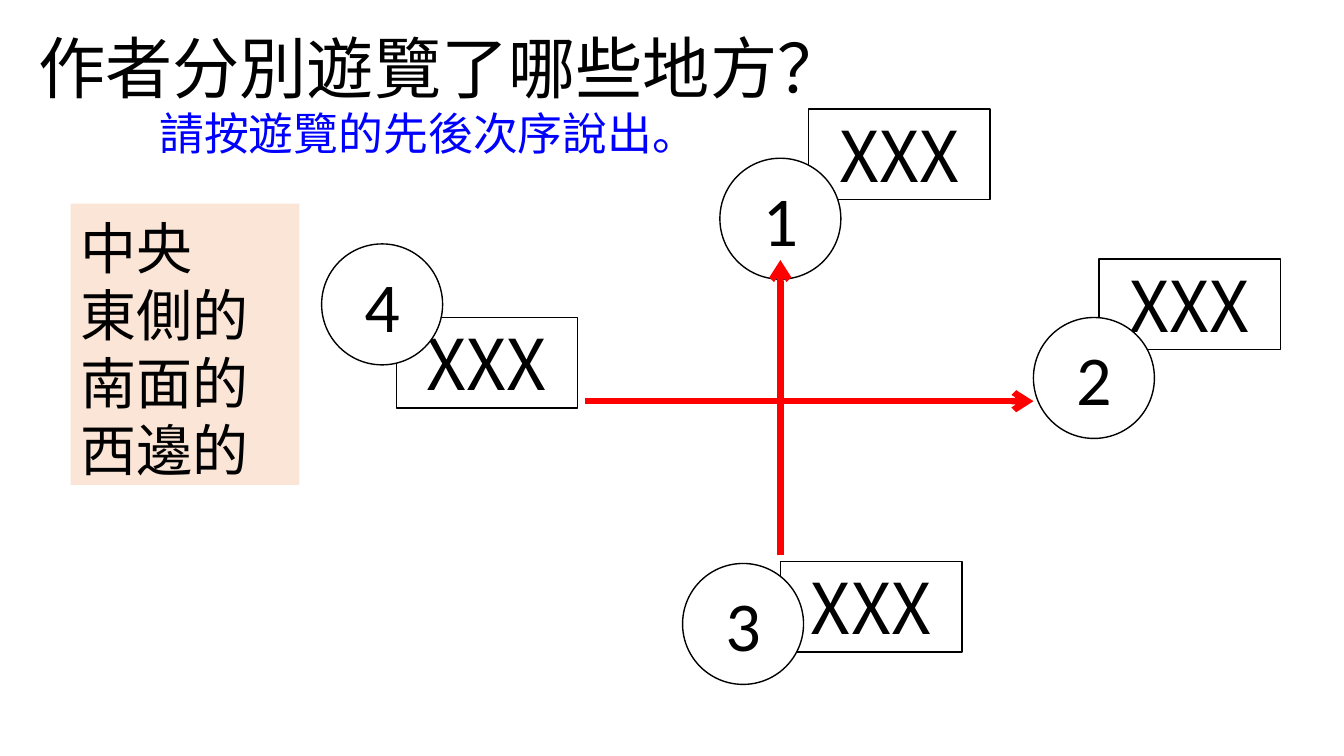
"""Builds a slide asking which places the author visited, in order."""
from lxml import etree
from pptx import Presentation
from pptx.dml.color import RGBColor
from pptx.enum import shapes, text
from pptx.oxml import ns
from pptx.util import Inches, Pt

BLACK = RGBColor(0, 0, 0)
WHITE = RGBColor(255, 255, 255)
BLUE = RGBColor(0, 0, 255)
RED = RGBColor(255, 0, 0)
PEACH = RGBColor(0xFB, 0xE5, 0xD6)
HAN = "Noto Sans CJK SC"
LATIN = "Calibri"
RECT = shapes.MSO_SHAPE.RECTANGLE
OVAL = shapes.MSO_SHAPE.OVAL
LEFT, CENTER = text.PP_ALIGN.LEFT, text.PP_ALIGN.CENTER

TITLE = "作者分別遊覽了哪些地方？"
HINT = "請按遊覽的先後次序說出。"
PLACES = ["中央", "東側的", "南面的", "西邊的"]
LABEL = "XXX"
CARDS = [(8.02, 1.08), (7.74, 5.57), (10.9, 2.57), (3.93, 3.15)]
DISCS = [(7.14, 1.57), (10.25, 3.15), (6.77, 5.59), (3.19, 2.42)]
ARROWS = [(5.8, 3.98, 10.25, 3.98), (7.74, 5.51, 7.74, 2.58)]

deck = Presentation()
deck.slide_width, deck.slide_height = Inches(13.33), Inches(7.5)
slide = deck.slides.add_slide(deck.slide_layouts[6])


def write(para, words, size=50, font=HAN, color=BLACK, align=CENTER, pitch=None):
    para.alignment = align
    if pitch:
        para.line_spacing = Pt(pitch)
    run = para.add_run()
    run.text = words
    run.font.size, run.font.name = Pt(size), font
    run.font.color.rgb = color
    east = etree.SubElement(run.font._element, ns.qn("a:ea"))
    east.set("typeface", font)


def block(kind, left, top, width, height, fill=WHITE, edge=True):
    shape = slide.shapes.add_shape(kind, *map(Inches, (left, top, width, height)))
    shape.shadow.inherit = False
    shape.fill.solid()
    shape.fill.fore_color.rgb = fill
    if edge:
        shape.line.color.rgb = BLACK
        shape.line.width = Pt(1)
    else:
        shape.line.fill.background()
    frame = shape.text_frame
    frame.word_wrap = True
    frame.vertical_anchor = text.MSO_ANCHOR.MIDDLE
    return frame


def arrow(*ends):
    line = slide.shapes.add_connector(shapes.MSO_CONNECTOR.STRAIGHT, *map(Inches, ends))
    line.line.color.rgb = RED
    line.line.width = Pt(4.5)
    tip = etree.SubElement(line.line._get_or_add_ln(), ns.qn("a:tailEnd"))
    tip.set("type", "arrow")
    etree.SubElement(line._element.spPr, ns.qn("a:effectLst"))


head = slide.shapes.add_textbox(*map(Inches, (0.28, 0.16, 7.94, 1.45))).text_frame
head.word_wrap = False
write(head.paragraphs[0], TITLE, size=48, align=LEFT, pitch=61)
write(head.add_paragraph(), HINT, size=32, color=BLUE, pitch=38)

for left, top in CARDS:
    write(block(RECT, left, top, 1.8, 0.9).paragraphs[0], LABEL)
for order, (left, top) in enumerate(DISCS, 1):
    write(block(OVAL, left, top, 1.2, 1.2).paragraphs[0], str(order), font=LATIN)

panel = block(RECT, 0.7, 2.02, 2.27, 2.79, fill=PEACH, edge=False)
panel.vertical_anchor = text.MSO_ANCHOR.TOP
panel.margin_top = Inches(0.1)
for index, place in enumerate(PLACES):
    para = panel.add_paragraph() if index else panel.paragraphs[0]
    write(para, place, size=40, align=LEFT, pitch=48)

for ends in ARROWS:
    arrow(*ends)

deck.save("out.pptx")
